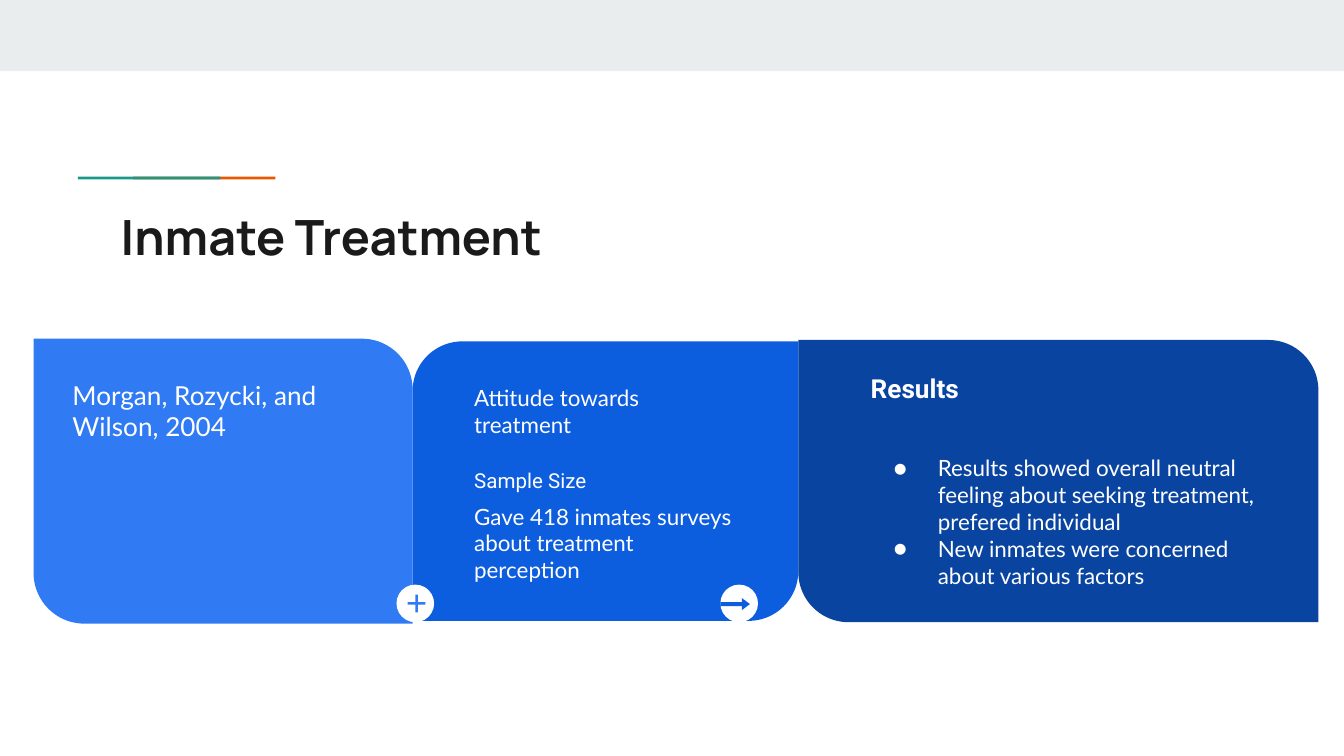
from lxml.etree import SubElement
from pptx import Presentation
from pptx.dml.color import RGBColor
from pptx.enum.shapes import MSO_SHAPE
from pptx.oxml.ns import qn
from pptx.util import Inches, Pt

COLORS = {
    "band": "E9EDEE", "orange": "EB5600", "teal": "1A9988", "ink": "1A1A1A",
    "white": "FFFFFF", "light": "307BF3", "medium": "0D5DDF", "dark": "0944A1",
}

presentation = Presentation()
presentation.slide_width = Inches(10)
presentation.slide_height = presentation.slide_width * 9 // 16
slide = presentation.slides.add_slide(presentation.slide_layouts[6])
column = presentation.slide_width / 100
row = presentation.slide_height / 56.25


def place(box):
    left, top, width, height = box
    return [round(size) for size in (left * column, top * row, width * column, height * row)]


def add_filled(kind, box, color, adjustments=()):
    shape = slide.shapes.add_shape(kind, *place(box))
    shape.shadow.inherit = False
    shape.fill.solid()
    shape.fill.fore_color.rgb = RGBColor.from_string(COLORS[color])
    shape.line.fill.background()
    for index, value in enumerate(adjustments):
        shape.adjustments[index] = value


add_filled(MSO_SHAPE.RECTANGLE, (0, 0, 100, 5.3), "band")
for left, color in ((9.9, "orange"), (5.8, "teal")):
    add_filled(MSO_SHAPE.RECTANGLE, (left, 13.15, 10.6, 0.2), color)

corner = 0.178
cards = [
    ((30.7, 25.4, 28.7, 20.8), "medium", (corner, 0)),
    ((2.5, 25.2, 28.2, 21.2), "light", (0, corner)),
    ((59.4, 25.3, 38.7, 21), "dark", (0, corner)),
]
for box, color, corners in cards:
    add_filled(MSO_SHAPE.ROUND_2_DIAG_RECTANGLE, box, color, corners)

badges = [
    (53.6, MSO_SHAPE.RIGHT_ARROW, (53.6, 44.5, 2.2, 0.9), "medium", (0.32, 0.67)),
    (29.5, MSO_SHAPE.MATH_PLUS, (30.1, 44, 1.8, 1.8), "light", (0.099,)),
]
for left, symbol, box, color, adjustments in badges:
    add_filled(MSO_SHAPE.OVAL, (left, 43.5, 2.8, 2.8), "white")
    add_filled(symbol, box, color, adjustments)

texts = [
    ((8, 14.4, 84.1, 5.9), "ink", [("Inmate Treatment", "Manrope", 26, True)], False),
    ((4.4, 27.2, 23.1, 6.4), "white",
     [("Morgan, Rozycki, and Wilson, 2004", "Lato", 14, False)], False),
    ((34.3, 27.6, 21.4, 6.1), "white",
     [("Attitude towards treatment", "Lato", 12, False),
      ("Sample Size", "Roboto", 11, False)], False),
    ((34.3, 36.4, 21.4, 6.8), "white",
     [("Gave 418 inmates surveys about treatment perception", "Lato", 12, False)], False),
    ((63.8, 26.7, 31.1, 6.2), "white", [("Results", "Roboto", 14, True)], False),
    ((63.8, 32.8, 31.1, 6.9), "white",
     [("Results showed overall neutral feeling about seeking treatment, prefered individual",
       "Lato", 12, False),
      ("New inmates were concerned about various factors", "Lato", 12, False)], True),
]
for box, color, lines, bulleted in texts:
    frame = slide.shapes.add_textbox(*place(box)).text_frame
    frame.word_wrap = True
    frame.margin_left = frame.margin_right = round(column)
    frame.margin_top = frame.margin_bottom = round(row)
    for index, (text, font, size, bold) in enumerate(lines):
        paragraph = frame.add_paragraph() if index else frame.paragraphs[0]
        paragraph.text = text
        if bulleted:
            properties = paragraph._p.get_or_add_pPr()
            properties.set("marL", str(round(5 * column)))
            properties.set("indent", str(round(-3.3 * column)))
            SubElement(properties, qn("a:buFont"), typeface=font)
            SubElement(properties, qn("a:buChar"), char="●")
        elif index:
            paragraph.space_before = Pt(16)
        paragraph.font.name = font
        paragraph.font.size = Pt(size)
        paragraph.font.bold = bold
        paragraph.font.color.rgb = RGBColor.from_string(COLORS[color])

presentation.save("out.pptx")
